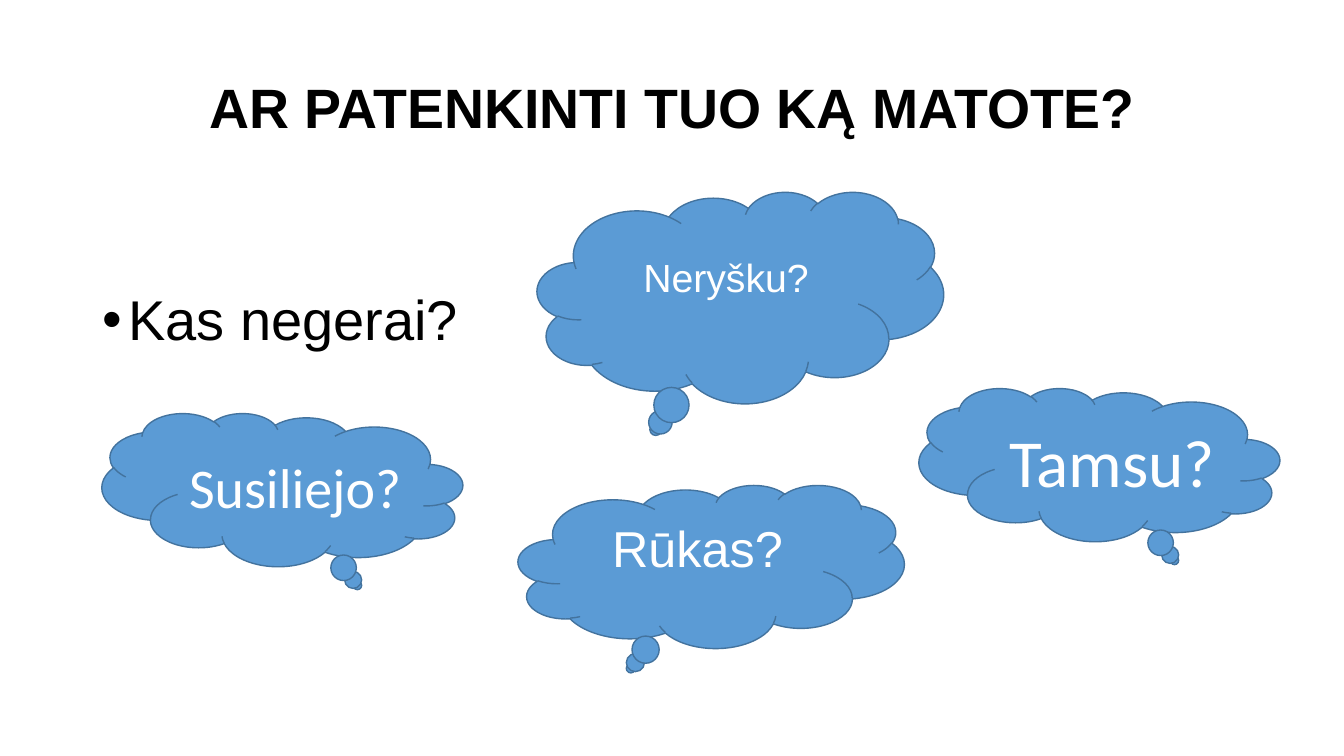
import dataclasses

import pptx
import pptx.dml.color
import pptx.enum.shapes
import pptx.enum.text
import pptx.oxml
import pptx.oxml.ns
import pptx.util

Cm = pptx.util.Cm
Pt = pptx.util.Pt
Anchor = pptx.enum.text.MSO_ANCHOR
Align = pptx.enum.text.PP_ALIGN


@dataclasses.dataclass(frozen=True)
class Theme:
    text: str = "000000"
    cloud_fill: str = "5B9BD5"
    cloud_line: str = "43739E"
    cloud_text: str = "FFFFFF"
    heading_font: str = "Arial"
    cloud_font: str = "Calibri"
    title_size: float = 39.6
    body_size: int = 40
    cloud_small: int = 28
    cloud_medium: int = 36
    cloud_large: int = 40
    cloud_huge: int = 48


THEME = Theme()


def color(value):
    return pptx.dml.color.RGBColor.from_string(value)


def place(shape, box):
    shape.left, shape.top, shape.width, shape.height = (Cm(length) for length in box)


def style_text(paragraph, font_name, size, text_color, bold=False):
    for run in paragraph.runs:
        run.font.name = font_name
        run.font.size = Pt(size)
        run.font.bold = bold
        run.font.color.rgb = color(text_color)


def fill_placeholder(placeholder, box, text):
    place(placeholder, box)
    text_frame = placeholder.text_frame
    text_frame.text = text
    text_frame.word_wrap = True
    text_frame.auto_size = pptx.enum.text.MSO_AUTO_SIZE.NONE
    paragraph = text_frame.paragraphs[0]
    paragraph.line_spacing = 0.9
    paragraph.space_before = Pt(0)
    return text_frame, paragraph


def add_title(slide, box):
    text_frame, paragraph = fill_placeholder(
        slide.shapes.title, box, "AR PATENKINTI TUO KĄ MATOTE?")
    text_frame.vertical_anchor = Anchor.MIDDLE
    text_frame.margin_bottom = Cm(1.57)
    paragraph.alignment = Align.CENTER
    style_text(paragraph, THEME.heading_font, THEME.title_size, THEME.text, bold=True)


def add_question(slide, box):
    text_frame, paragraph = fill_placeholder(
        slide.placeholders[1], box, "Kas negerai?")
    text_frame.vertical_anchor = Anchor.TOP
    text_frame.margin_top = Cm(2.29)
    properties = paragraph._p.get_or_add_pPr()
    properties.set("marL", str(Cm(0.64)))
    properties.set("indent", str(-Cm(0.64)))
    namespace = pptx.oxml.ns.nsdecls("a")
    properties.append(pptx.oxml.parse_xml(f'<a:buFont {namespace} typeface="Arial"/>'))
    properties.append(pptx.oxml.parse_xml(f'<a:buChar {namespace} char="•"/>'))
    style_text(paragraph, THEME.heading_font, THEME.body_size, THEME.text)


def add_cloud(slide, box, text, font_name, size, flipped=False, raised=False):
    cloud = slide.shapes.add_shape(
        pptx.enum.shapes.MSO_SHAPE.CLOUD_CALLOUT, *(Cm(length) for length in box))
    cloud.shadow.inherit = False
    cloud.fill.solid()
    cloud.fill.fore_color.rgb = color(THEME.cloud_fill)
    cloud.line.color.rgb = color(THEME.cloud_line)
    cloud.line.width = Pt(1)
    if flipped:
        cloud._element.spPr.xfrm.set("flipH", "1")
    text_frame = cloud.text_frame
    text_frame.text = text
    text_frame.word_wrap = True
    text_frame.vertical_anchor = Anchor.MIDDLE
    if raised:
        text_frame.margin_bottom = Cm(0.9)
    paragraph = text_frame.paragraphs[0]
    paragraph.alignment = Align.CENTER
    style_text(paragraph, font_name, size, THEME.cloud_text)


def add_clouds(slide):
    arial, calibri = THEME.heading_font, THEME.cloud_font
    add_cloud(slide, (13.06, 12.22, 9.73, 4.11), "Rūkas?", arial,
              THEME.cloud_medium, raised=True)
    add_cloud(slide, (13.54, 4.83, 10.24, 5.33), "Neryšku?", arial,
              THEME.cloud_small, raised=True)
    add_cloud(slide, (2.57, 10.41, 9.09, 3.86), "Susiliejo?", calibri,
              THEME.cloud_large, flipped=True)
    add_cloud(slide, (23.16, 9.78, 9.09, 3.86), "Tamsu?", calibri,
              THEME.cloud_huge, flipped=True)


def main():
    presentation = pptx.Presentation()
    presentation.slide_width = Cm(33.87)
    presentation.slide_height = Cm(19.05)
    slide = presentation.slides.add_slide(presentation.slide_layouts[1])
    add_title(slide, (2.34, 2.29, 29.21, 2.41))
    add_question(slide, (2.34, 5.08, 29.21, 12.09))
    add_clouds(slide)
    presentation.save("out.pptx")


if __name__ == "__main__":
    main()
